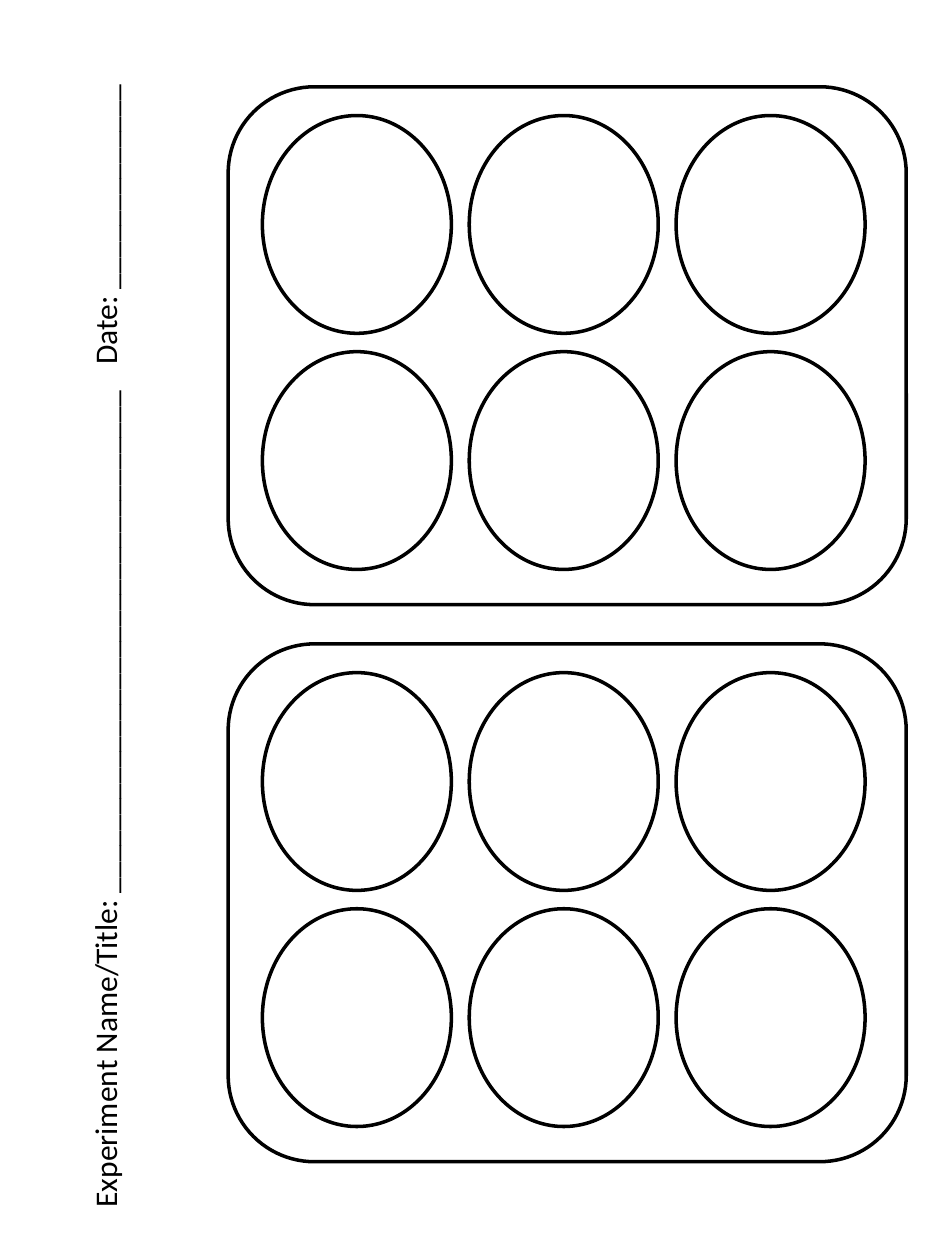
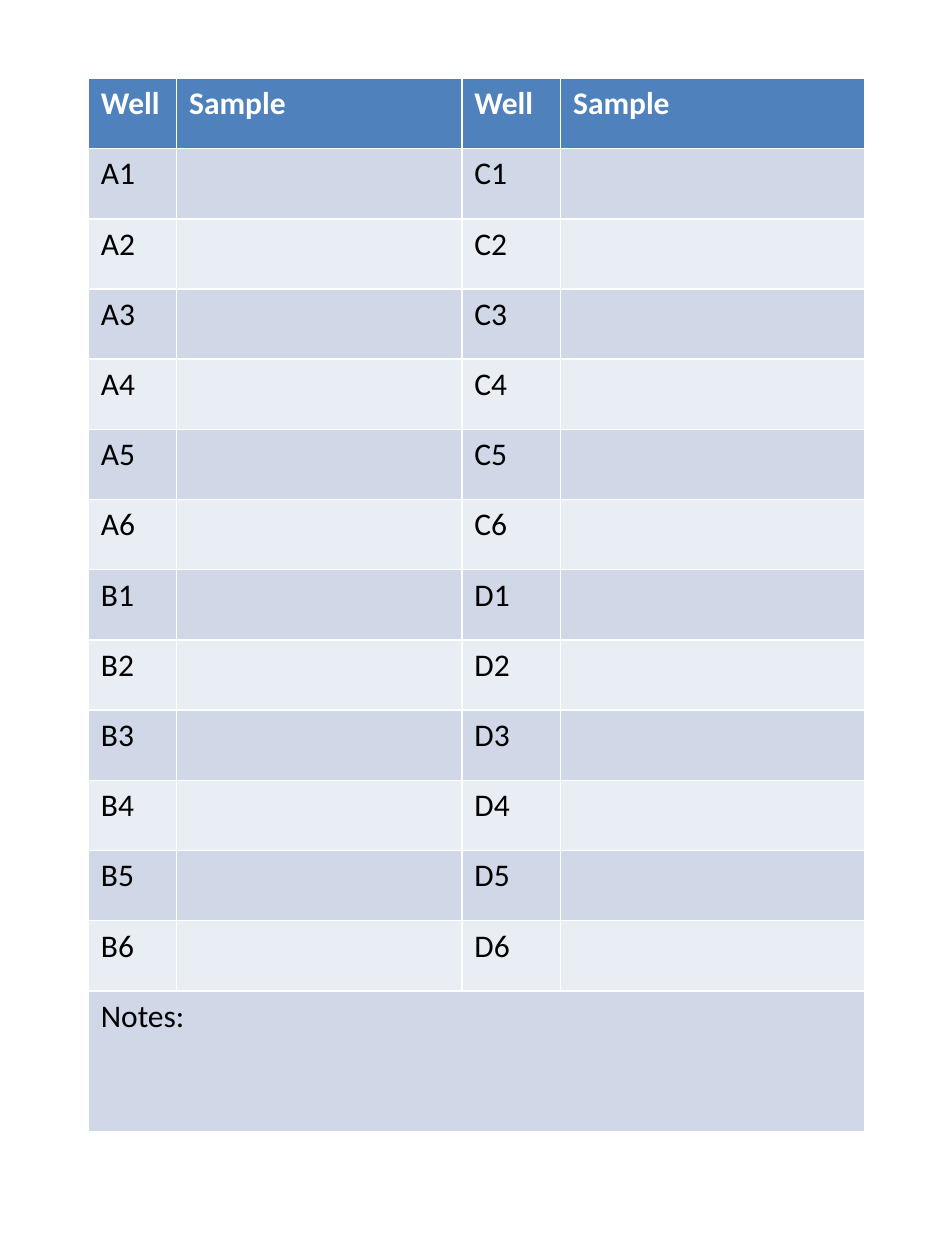
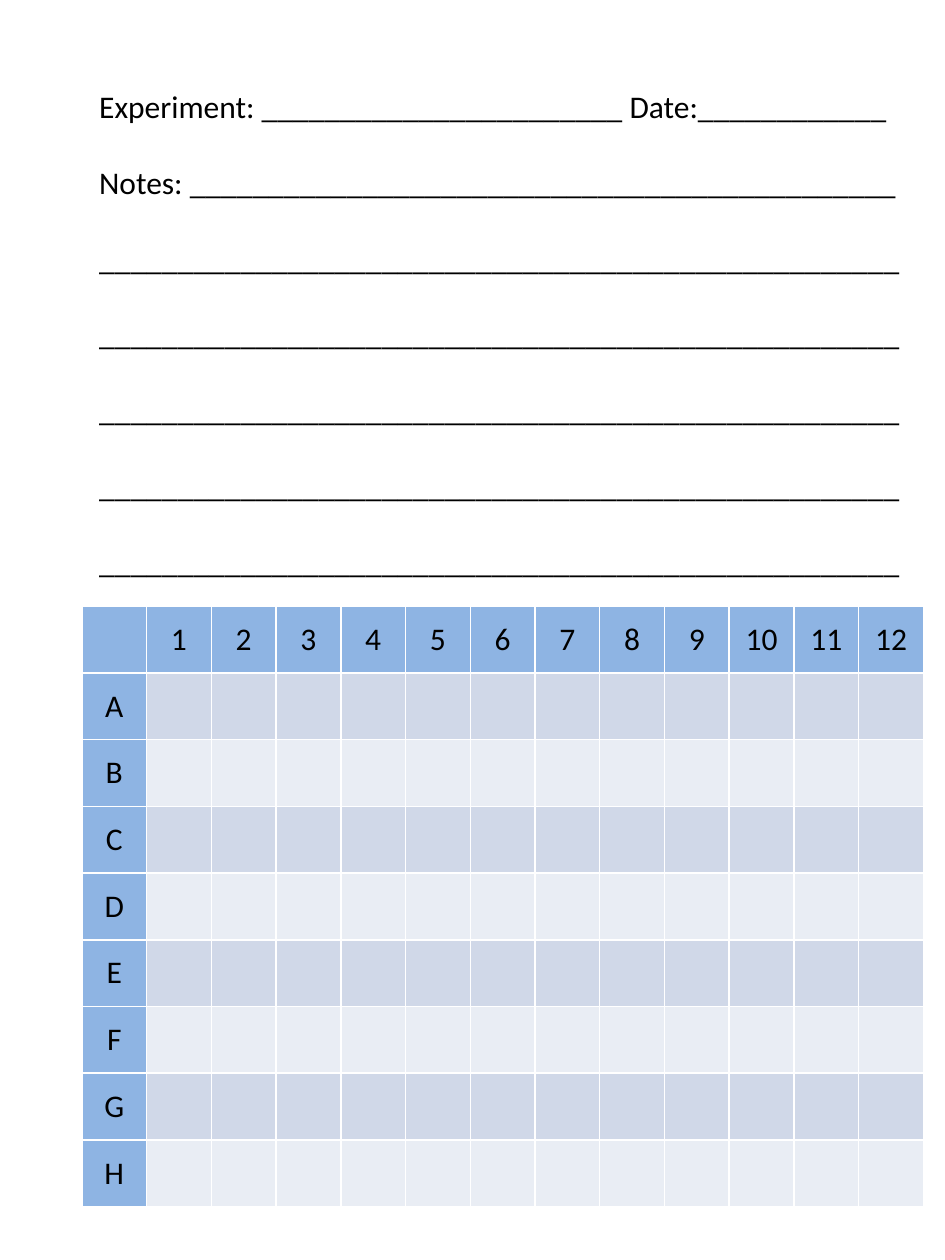
from itertools import product

from pptx import Presentation
from pptx.dml.color import RGBColor
from pptx.enum.shapes import MSO_SHAPE
from pptx.enum.text import MSO_ANCHOR, PP_ALIGN
from pptx.util import Cm, Pt

OVAL, ROUNDED = MSO_SHAPE.OVAL, MSO_SHAPE.ROUNDED_RECTANGLE
MIDDLE, CENTER = MSO_ANCHOR.MIDDLE, PP_ALIGN.CENTER

BLACK = RGBColor(0x00, 0x00, 0x00)
WHITE = RGBColor(0xFF, 0xFF, 0xFF)
HEADER_BLUE = RGBColor(0x4F, 0x81, 0xBD)
LABEL_BLUE = RGBColor(0x8E, 0xB4, 0xE3)
BANDS = (RGBColor(0xD0, 0xD8, 0xE8), RGBColor(0xE9, 0xED, 0xF4))

BODY = {"name": "Calibri", "size": Pt(18), "bold": False}
HEADING = {**BODY, "bold": True}


def write(paragraph, text, style=BODY, color=BLACK):
    run = paragraph.add_run()
    run.text = text
    for attribute, value in style.items():
        setattr(run.font, attribute, value)
    run.font.color.rgb = color


def fill_cell(cell, color):
    cell.fill.solid()
    cell.fill.fore_color.rgb = color


def add_outline(slide, preset, left, top, width, height):
    outline = slide.shapes.add_shape(preset, left, top, width, height)
    outline.shadow.inherit = False
    outline.fill.background()
    outline.line.color.rgb = BLACK
    outline.line.width = Pt(2)


def add_plate(slide, left, top, width, height):
    """Six-well plate: three wells across, two down."""
    for row, column in product(range(2), range(3)):
        add_outline(slide, OVAL,
                    left + Cm(0.69) + column * Cm(4.17),
                    top + Cm(0.58) + row * Cm(4.76),
                    Cm(3.81), Cm(4.39))
    add_outline(slide, ROUNDED, left, top, width, height)


def add_upright_label(slide, text, left, top, width, height):
    """Text reading upwards inside the given tall box."""
    label = slide.shapes.add_textbox(left + (width - height) // 2,
                                     top + (height - width) // 2,
                                     height, width)
    label.rotation = 270
    write(label.text_frame.paragraphs[0], text)


def add_sample_table(slide, left, top, width, height):
    """Well and sample list with a notes row of double height."""
    wells = [[f"{letter}{number}" for letter in pair for number in range(1, 7)]
             for pair in ("AB", "CD")]
    notes_row = len(wells[0]) + 1
    table = slide.shapes.add_table(notes_row + 1, 4, left, top, width, height).table
    for column, column_width in zip(table.columns, (1.78, 5.75, 1.99, 6.14)):
        column.width = Cm(column_width)
    for row in table.rows:
        row.height = height // (notes_row + 2)
    table.rows[notes_row].height *= 2

    # Header
    for cell, heading in zip(table.rows[0].cells, ("Well", "Sample") * 2):
        fill_cell(cell, HEADER_BLUE)
        write(cell.text_frame.paragraphs[0], heading, HEADING, WHITE)

    # Banded rows and well names
    for row, column in product(range(1, notes_row + 1), range(4)):
        fill_cell(table.cell(row, column), BANDS[(row - 1) % 2])
    for side, names in enumerate(wells):
        for row, name in enumerate(names, 1):
            write(table.cell(row, 2 * side).text_frame.paragraphs[0], name)

    # Notes
    notes = table.cell(notes_row, 0)
    notes.merge(table.cell(notes_row, 3))
    write(notes.text_frame.paragraphs[0], "Notes:")


def add_plate_grid(slide, left, top, width, height):
    """96-well grid with numbered columns and lettered rows."""
    column_labels = [""] + [str(number) for number in range(1, 13)]
    row_labels = [""] + list("ABCDEFGH")
    column_count, row_count = len(column_labels), len(row_labels)
    table = slide.shapes.add_table(row_count, column_count,
                                   left, top, width, height).table
    for column in table.columns:
        column.width = width // column_count
    for row in table.rows:
        row.height = height // row_count

    for row, column in product(range(row_count), range(column_count)):
        cell = table.cell(row, column)
        is_label = row == 0 or column == 0
        fill_cell(cell, LABEL_BLUE if is_label else BANDS[(row - 1) % 2])
        label = row_labels[row] or column_labels[column]
        if is_label and label:
            cell.vertical_anchor = MIDDLE
            paragraph = cell.text_frame.paragraphs[0]
            paragraph.alignment = CENTER
            write(paragraph, label)


def add_note_lines(slide, left, top, width, height):
    """Experiment, date and ruled lines to write on."""
    frame = slide.shapes.add_textbox(left, top, width, height).text_frame
    lines = ["Experiment: " + "_" * 23 + " Date:" + "_" * 12,
             "Notes: " + "_" * 45] + ["_" * 51] * 5
    for index, line in enumerate(lines):
        paragraph = frame.add_paragraph() if index else frame.paragraphs[0]
        paragraph.space_before = Pt(21.7 if index else 0)
        write(paragraph, line)


def six_well_page(slide):
    for top in (1.75, 12.98):
        add_plate(slide, Cm(4.6), Cm(top), Cm(13.67), Cm(10.44))
    add_upright_label(slide, "Experiment Name/Title: " + "_" * 32,
                      Cm(1.6), Cm(7.42), Cm(1.02), Cm(17.17))
    add_upright_label(slide, "Date: " + "_" * 13,
                      Cm(1.6), Cm(1.38), Cm(1.02), Cm(6.22))


def sample_page(slide):
    add_sample_table(slide, Cm(1.78), Cm(1.58), Cm(15.66), Cm(21.23))


def grid_page(slide):
    add_plate_grid(slide, Cm(1.65), Cm(12.22), Cm(16.97), Cm(12.11))
    add_note_lines(slide, Cm(1.75), Cm(1.63), Cm(16.87), Cm(10.26))


def main():
    deck = Presentation()
    deck.slide_width, deck.slide_height = Cm(19.05), Cm(25.4)
    for build_page in (six_well_page, sample_page, grid_page):
        build_page(deck.slides.add_slide(deck.slide_layouts[6]))
    deck.save("out.pptx")


if __name__ == "__main__":
    main()
